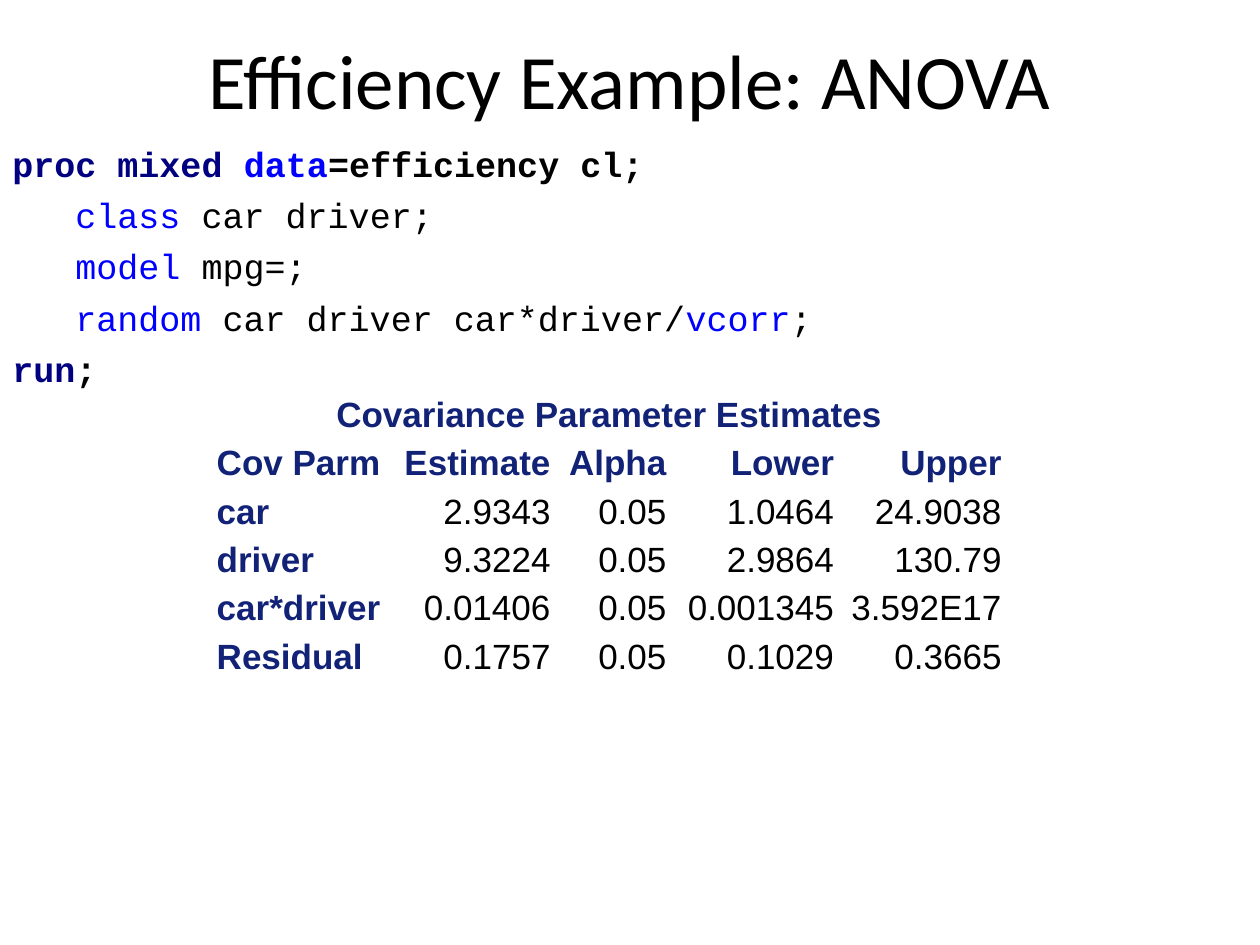
from dataclasses import dataclass

from pptx import Presentation
from pptx.dml.color import RGBColor
from pptx.enum.text import MSO_ANCHOR as Anchor, PP_ALIGN as Align
from pptx.util import Inches, Pt


@dataclass(frozen=True)
class Theme:
    black: str = "000000"
    step: str = "000080"
    keyword: str = "0000FF"
    heading: str = "112277"
    title_font: str = "Calibri"
    code_font: str = "Courier New"
    table_font: str = "Arial"
    title_size: int = 44
    text_size: int = 20


THEME = Theme()

# Each code line: indented, then (text, colour, bold) spans
CODE = [
    (False, [("proc mixed ", THEME.step, True), ("data", THEME.keyword, True),
             ("=efficiency cl;", THEME.black, True)]),
    (True, [("class", THEME.keyword, False), (" car driver;", THEME.black, False)]),
    (True, [("model", THEME.keyword, False), (" mpg=;", THEME.black, False)]),
    (True, [("random", THEME.keyword, False),
            (" car driver car*driver/", THEME.black, False),
            ("vcorr", THEME.keyword, False), (";", THEME.black, False)]),
    (False, [("run", THEME.step, True), (";", THEME.black, True)]),
]

TABLE_TITLE = "Covariance Parameter Estimates"
ESTIMATES = [
    ("Cov Parm", "Estimate", "Alpha", "Lower", "Upper"),
    ("car", "2.9343", "0.05", "1.0464", "24.9038"),
    ("driver", "9.3224", "0.05", "2.9864", "130.79"),
    ("car*driver", "0.01406", "0.05", "0.001345", "3.592E17"),
    ("Residual", "0.1757", "0.05", "0.1029", "0.3665"),
]
COLUMN_WIDTHS = [1.42, 1.33, 0.92, 1.33, 1.33]
ROW_HEIGHT = 0.35


def add_text(para, text, *, font, size=THEME.text_size, color=THEME.black, bold=False):
    span = para.add_run()
    span.text = text
    span.font.name = font
    span.font.size = Pt(size)
    span.font.bold = bold
    span.font.color.rgb = RGBColor.from_string(color)


def add_title(page, text):
    title = page.shapes.title
    title.left, title.top = Inches(0.5), Inches(0)
    title.width, title.height = Inches(9), Inches(1.25)
    title.text_frame.vertical_anchor = Anchor.MIDDLE
    para = title.text_frame.paragraphs[0]
    para.alignment = Align.CENTER
    add_text(para, text, font=THEME.title_font, size=THEME.title_size)


def add_code(page, lines):
    box = page.shapes.add_textbox(Inches(0), Inches(1.08), Inches(10), Inches(2.17))
    frame = box.text_frame
    frame.word_wrap = True
    for number, (indented, spans) in enumerate(lines):
        para = frame.add_paragraph() if number else frame.paragraphs[0]
        para.space_before = Pt(5.3)
        if indented:
            # Three characters of the code font
            para._p.get_or_add_pPr().set("marL", str(Inches(0.5)))
        for text, color, bold in spans:
            add_text(para, text, font=THEME.code_font, color=color, bold=bold)


def fill_cell(cell, text, *, align, heading):
    para = cell.text_frame.paragraphs[0]
    para.alignment = align
    para.line_spacing = 1.15
    para.space_before = para.space_after = Pt(5)
    add_text(para, text, font=THEME.table_font, bold=heading,
             color=THEME.heading if heading else THEME.black)


def add_estimates(page):
    row_count = len(ESTIMATES) + 1
    table = page.shapes.add_table(
        row_count, len(COLUMN_WIDTHS), Inches(1.67), Inches(3.08),
        Inches(sum(COLUMN_WIDTHS)), Inches(ROW_HEIGHT * row_count)).table
    table.first_row = table.horz_banding = False
    for column, width in zip(table.columns, COLUMN_WIDTHS):
        column.width = Inches(width)
    for cell in table.iter_cells():
        cell.fill.background()
        cell.vertical_anchor = Anchor.MIDDLE
        cell.margin_left = cell.margin_right = Inches(0.05)
        cell.margin_top = cell.margin_bottom = 0

    # Title row across all columns
    table.cell(0, 0).merge(table.cell(0, len(COLUMN_WIDTHS) - 1))
    fill_cell(table.cell(0, 0), TABLE_TITLE, align=Align.CENTER, heading=True)

    # Column headings and values
    for row, values in enumerate(ESTIMATES, start=1):
        for column, text in enumerate(values):
            fill_cell(table.cell(row, column), text,
                      align=Align.RIGHT if column else Align.LEFT,
                      heading=row == 1 or column == 0)


def main():
    deck = Presentation()
    deck.slide_width, deck.slide_height = Inches(10), Inches(7.5)
    page = deck.slides.add_slide(deck.slide_layouts[5])
    add_title(page, "Efficiency Example: ANOVA")
    add_code(page, CODE)
    add_estimates(page)
    deck.save("out.pptx")


if __name__ == "__main__":
    main()
